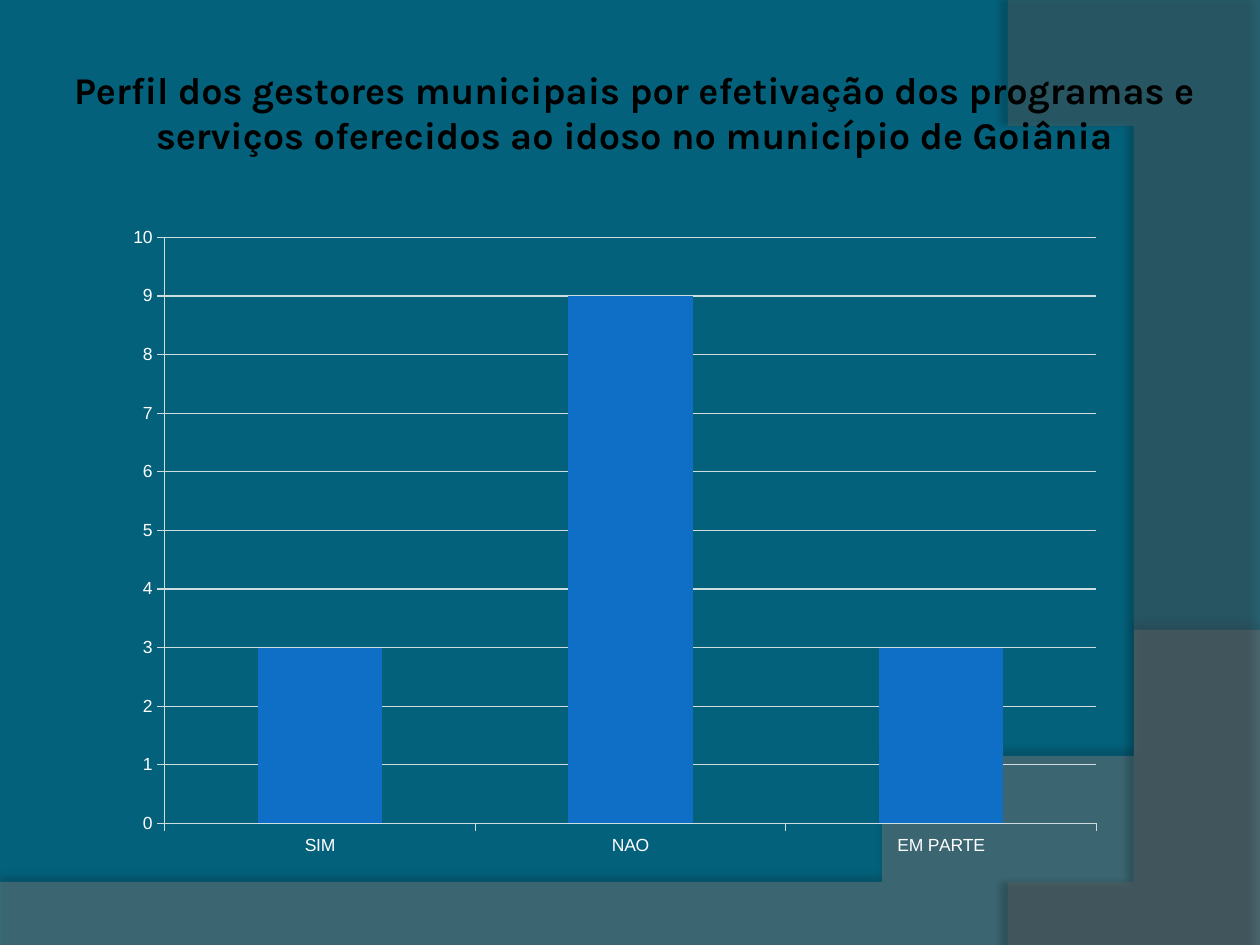
from lxml import etree
from pptx import Presentation
from pptx.chart.data import CategoryChartData
from pptx.dml.color import RGBColor
from pptx.enum.chart import XL_CHART_TYPE, XL_TICK_MARK
from pptx.enum.text import MSO_ANCHOR, PP_ALIGN
from pptx.oxml import parse_xml
from pptx.oxml.ns import nsdecls, qn
from pptx.util import Inches, Pt

WIDTH, HEIGHT = 10, 7.5
COLORS = {
    "background": "04617B",
    "wave": "7F7F7F",
    "arc": "5E5E5E",
    "title": "000000",
    "bar": "0F6FC6",
    "label": "FFFFFF",
    "grid": "D0DDE0",
}


def color(name):
    return RGBColor.from_string(COLORS[name])


def share(left, top, width, height):
    return (Inches(WIDTH * left), Inches(HEIGHT * top),
            Inches(WIDTH * width), Inches(HEIGHT * height))


def curve(start, first, second, end, steps=48):
    points = []
    for step in range(steps + 1):
        t = step / steps
        weights = ((1 - t) ** 3, 3 * t * (1 - t) ** 2, 3 * t * t * (1 - t), t ** 3)
        points.append(tuple(
            sum(weight * value for weight, value in zip(weights, values))
            for values in zip(start, first, second, end)
        ))
    return points


def add_sweep(page, points, fill, opacity, shadow_opacity, distance, direction):
    builder = page.shapes.build_freeform(*points[0], scale=Inches(1))
    builder.add_line_segments(points[1:], close=True)
    sweep = builder.convert_to_shape()
    sweep.fill.solid()
    sweep.fill.fore_color.rgb = color(fill)
    sweep.line.fill.background()
    tint = sweep.fill._xPr.find(qn("a:solidFill"))[0]
    etree.SubElement(tint, qn("a:alpha"), val=str(opacity * 1000))
    sweep._element.spPr.append(parse_xml(
        f'<a:effectLst {nsdecls("a")}>'
        f'<a:outerShdw blurRad="{Pt(4)}" dist="{Pt(distance)}" '
        f'dir="{direction * 60000}" algn="ctr" rotWithShape="0">'
        f'<a:srgbClr val="000000"><a:alpha val="{shadow_opacity * 1000}"/></a:srgbClr>'
        '</a:outerShdw></a:effectLst>'
    ))


def add_title(page, text):
    box = page.shapes.add_textbox(*share(0.043, 0.048, 0.921, 0.19))
    frame = box.text_frame
    frame.word_wrap = True
    frame.vertical_anchor = MSO_ANCHOR.TOP
    frame.margin_left = frame.margin_right = frame.margin_bottom = Inches(0.05)
    frame.margin_top = Inches(0.17)
    para = frame.paragraphs[0]
    para.text = text
    para.alignment = PP_ALIGN.CENTER
    para.font.name = "Karla"
    para.font.size = Pt(21.6)
    para.font.bold = True
    para.font.color.rgb = color("title")


def style_line(line):
    line.color.rgb = color("grid")
    line.width = Pt(0.75)


def set_plot_area(chart, **portions):
    plot_area = chart._chartSpace.chart.plotArea
    for old in plot_area.findall(qn("c:layout")):
        plot_area.remove(old)
    values = "".join(f'<c:{key} val="{value}"/>' for key, value in portions.items())
    plot_area.insert(0, parse_xml(
        f'<c:layout {nsdecls("c")}><c:manualLayout><c:layoutTarget val="inner"/>'
        f'<c:xMode val="edge"/><c:yMode val="edge"/>{values}'
        '</c:manualLayout></c:layout>'
    ))


def add_bar_chart(page, categories, values):
    data = CategoryChartData()
    data.categories = categories
    data.add_series("Series 1", values)
    chart = page.shapes.add_chart(
        XL_CHART_TYPE.COLUMN_CLUSTERED, *share(0.091, 0.227, 0.795, 0.693), data
    ).chart
    chart.has_legend = False
    chart.has_title = False
    chart.font.name = "Arial"
    chart.font.size = Pt(10)
    chart.font.color.rgb = color("label")
    for axis in (chart.category_axis, chart.value_axis):
        axis.major_tick_mark = XL_TICK_MARK.OUTSIDE
        style_line(axis.format.line)
    scale = chart.value_axis
    scale.minimum_scale, scale.maximum_scale, scale.major_unit = 0, 10, 1
    scale.has_major_gridlines = True
    style_line(scale.major_gridlines.format.line)
    plot = chart.plots[0]
    plot.gap_width = 150
    plot.vary_by_categories = False
    bars = plot.series[0].format.fill
    bars.solid()
    bars.fore_color.rgb = color("bar")
    set_plot_area(chart, x=0.05, y=0.035, w=0.93, h=0.895)


def main():
    deck = Presentation()
    deck.slide_width, deck.slide_height = Inches(WIDTH), Inches(HEIGHT)
    page = deck.slides.add_slide(deck.slide_layouts[6])
    page.background.fill.solid()
    page.background.fill.fore_color.rgb = color("background")

    wave = [(0, HEIGHT), (WIDTH, HEIGHT)]
    wave += curve((WIDTH, 5.2), (5.59, 7.29), (3.91, 7.19), (0, 7.05))
    add_sweep(page, wave, "wave", 45, 35, 3.5, 270)
    arc = [(WIDTH, 0.02), (WIDTH, HEIGHT)]
    arc += curve((8.21, HEIGHT), (9.35, 6.19), (10.18, 3), (8, 0))
    add_sweep(page, arc, "arc", 40, 45, 4, 180)

    add_title(page, "Perfil dos gestores municipais por efetivação dos programas e "
                    "serviços oferecidos ao idoso no município de Goiânia")
    add_bar_chart(page, ("SIM", "NAO", "EM PARTE"), (3, 9, 3))
    deck.save("out.pptx")


if __name__ == "__main__":
    main()
